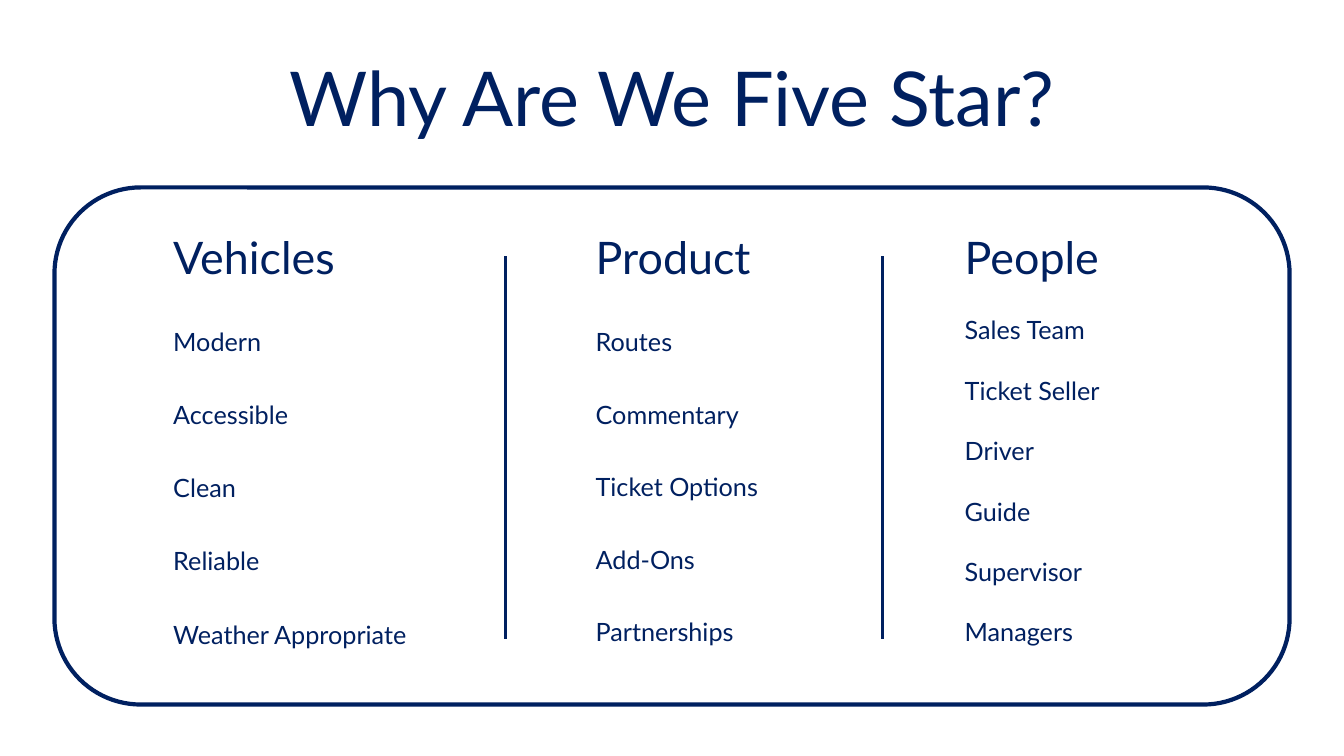
"""Build the Five Star slide with three columns of reasons."""
import pptx
import pptx.util
import pptx.dml.color
import pptx.enum.shapes
import pptx.enum.text
import pptx.oxml.ns
from lxml import etree

Inches = pptx.util.Inches
Pt = pptx.util.Pt
Align = pptx.enum.text.PP_ALIGN
Anchor = pptx.enum.text.MSO_ANCHOR


def color(code):
    return pptx.dml.color.RGBColor.from_string(code)


class Page:
    navy = "002060"
    face = "Lato"

    def __init__(self, slide):
        self.slide = slide

    def text(self, words, x, y, w, h, size=18, align=Align.LEFT,
             anchor=Anchor.TOP, space=1.0):
        box = self.slide.shapes.add_textbox(Inches(x), Inches(y), Inches(w), Inches(h))
        frame = box.text_frame
        frame.word_wrap = True
        frame.vertical_anchor = anchor
        para = frame.paragraphs[0]
        para.alignment = align
        para.line_spacing = space
        run = para.add_run()
        run.text = words
        run.font.name = self.face
        run.font.size = Pt(size)
        run.font.color.rgb = color(self.navy)

    def stroke(self, line, width):
        line.color.rgb = color(self.navy)
        line.width = Pt(width)

    def frame(self, x, y, w, h):
        kind = pptx.enum.shapes.MSO_SHAPE.ROUNDED_RECTANGLE
        shape = self.slide.shapes.add_shape(kind, Inches(x), Inches(y), Inches(w), Inches(h))
        shape.shadow.inherit = False
        shape.fill.background()
        self.stroke(shape.line, 3)

    def rule(self, x, top, end):
        kind = pptx.enum.shapes.MSO_CONNECTOR.STRAIGHT
        line = self.slide.shapes.add_connector(kind, Inches(x), Inches(top), Inches(x), Inches(end))
        self.stroke(line.line, 2.25)
        etree.SubElement(line._element.spPr, pptx.oxml.ns.qn("a:effectLst"))

    def column(self, head, items, x, top, step):
        self.text(head, x, 2.23, 3, 0.64, size=32)
        for i, item in enumerate(items):
            self.text(item, x, top + i * step, 3, 0.4)


def main():
    deck = pptx.Presentation()
    deck.slide_width = Inches(13.33)
    deck.slide_height = Inches(7.5)
    page = Page(deck.slides.add_slide(deck.slide_layouts[6]))
    page.text("Why Are We Five Star?", 0.97, 0.51, 11.39, 0.96, size=54,
              align=Align.CENTER, anchor=Anchor.BOTTOM, space=0.9)
    page.frame(0.54, 1.86, 12.25, 5.13)
    columns = [
        ("Vehicles", ["Modern", "Accessible", "Clean", "Reliable",
                      "Weather Appropriate"], 1.62, 3.19, 0.725),
        ("Product", ["Routes", "Commentary", "Ticket Options", "Add-Ons",
                     "Partnerships"], 5.81, 3.19, 0.72),
        ("People", ["Sales Team", "Ticket Seller", "Driver", "Guide",
                    "Supervisor", "Managers"], 9.47, 3.07, 0.6),
    ]
    for column in columns:
        page.column(*column)
    for x in (5.01, 8.75):
        page.rule(x, 2.54, 6.34)
    deck.save("out.pptx")


if __name__ == "__main__":
    main()
